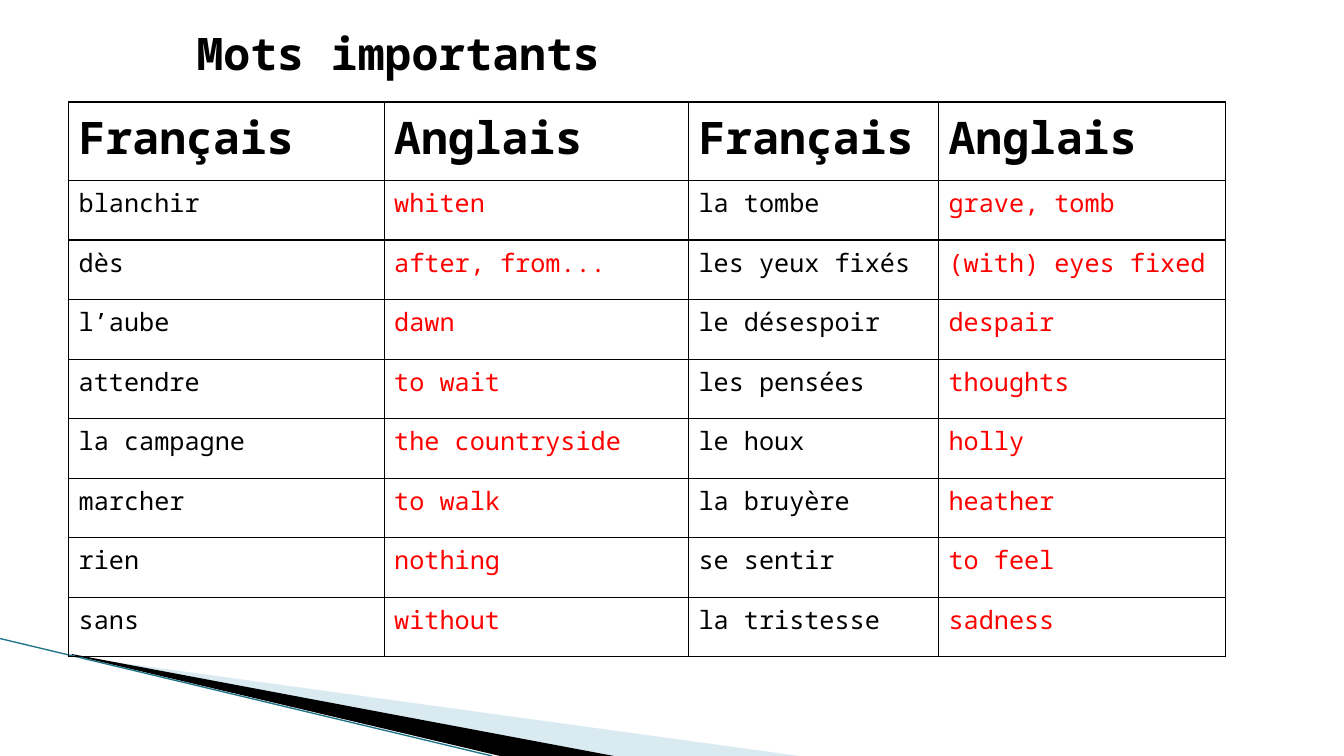
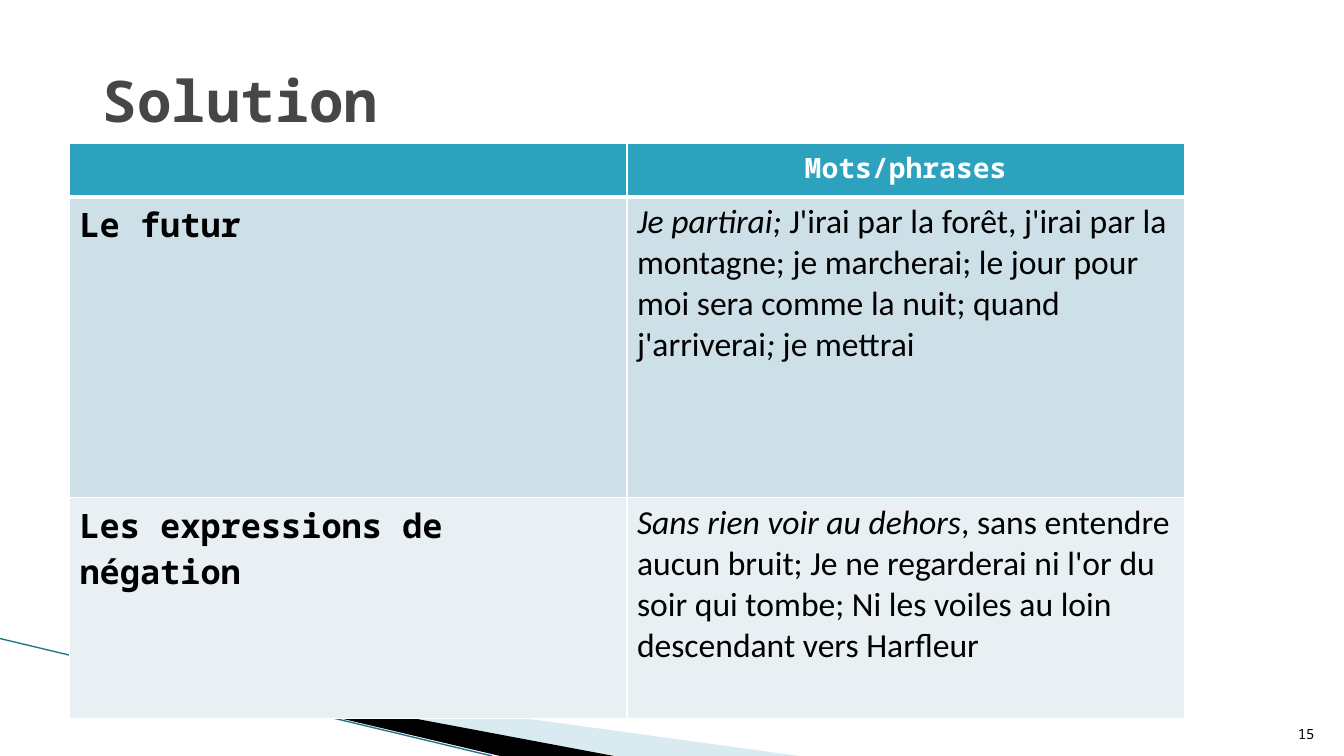
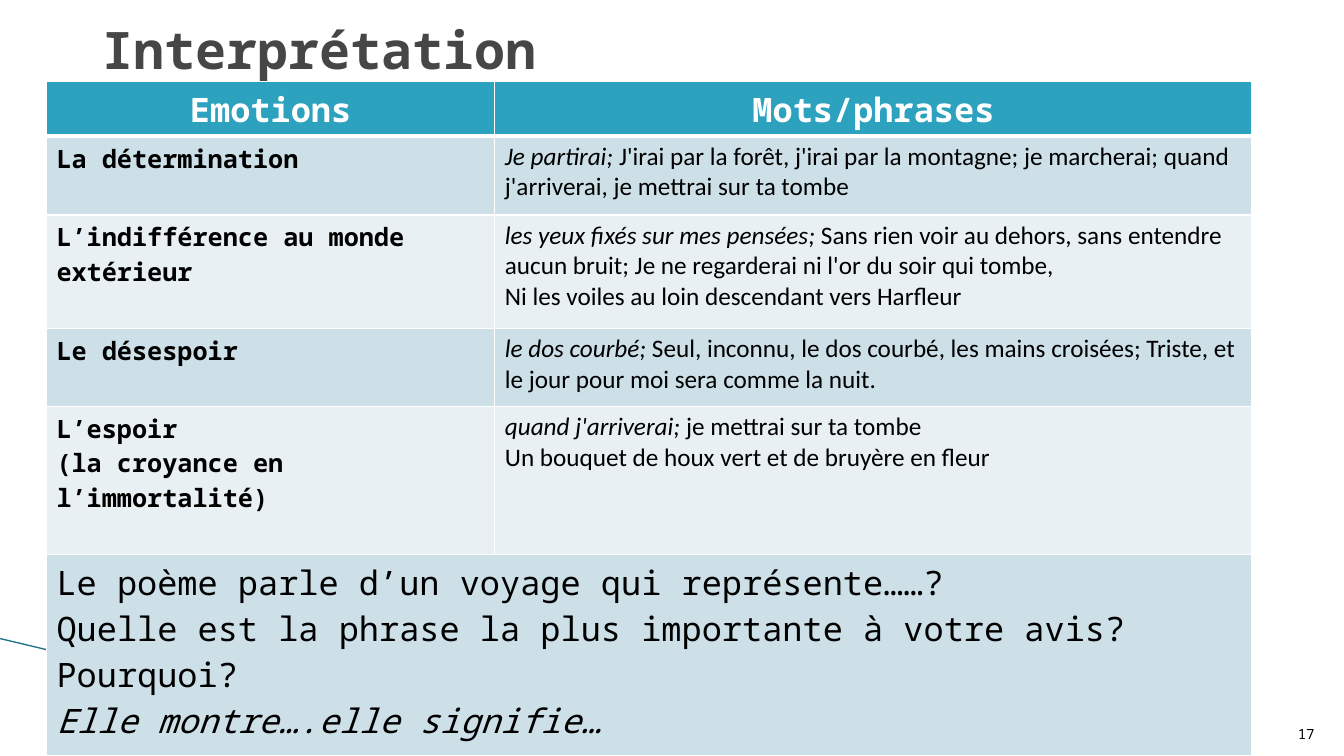
"""Build three French poetry lesson slides: vocabulary, solution and interpretation."""
from dataclasses import dataclass

from lxml import etree
from pptx import Presentation
from pptx import util as u
from pptx.dml.color import RGBColor as Rgb
from pptx.enum import shapes, text
from pptx.oxml import ns


@dataclass(frozen=True)
class Theme:
    mono: str = "Noto Sans Mono"
    sans: str = "Calibri"
    black: str = "000000"
    white: str = "FFFFFF"
    grey: str = "464646"
    red: str = "FF0000"
    teal: str = "2DA2BF"
    line: str = "1F7487"
    wedge: str = "A0CBDC"
    bands: tuple = ("E8F0F4", "CDE0E8")
    large: float = 32
    head: float = 24
    small: float = 20
    body: float = 18
    foot: float = 10


look = Theme()
LEFT, MID, RIGHT = text.PP_ALIGN.LEFT, text.PP_ALIGN.CENTER, text.PP_ALIGN.RIGHT


def write(frame, words, size, color=look.black, face=look.mono, bold=False, align=LEFT):
    """Fill a frame; asterisks enclose italic parts."""
    frame.text = words.replace("*", "")
    for para, line in zip(frame.paragraphs, words.split("\n")):
        para.alignment = align
        para.text = ""
        for n, part in enumerate(line.split("*")):
            if part:
                run = para.add_run()
                run.text = part
                font = run.font
                font.name, font.size = face, u.Pt(size)
                font.bold, font.italic = bold, n % 2 == 1
                font.color.rgb = Rgb.from_string(color)


def grid(slide, left, top, cols, rows, edge, thick):
    """Add a plain table with edges; thick is the rule under its first row."""
    frame = slide.shapes.add_table(
        len(rows), len(cols), u.Cm(left), u.Cm(top), u.Cm(sum(cols)), u.Cm(sum(rows)))
    table = frame.table
    table.first_row = table.horz_banding = False
    for col, width in zip(table.columns, cols):
        col.width = u.Cm(width)
    for r, (row, height) in enumerate(zip(table.rows, rows)):
        row.height = u.Cm(height)
        for cell in row.cells:
            props = cell._tc.get_or_add_tcPr()
            for n, side in enumerate("LRTB"):
                wide = thick if (r, side) in ((0, "B"), (1, "T")) else 1
                rule = etree.Element(ns.qn("a:ln" + side), w=str(u.Pt(wide)))
                fill = etree.SubElement(rule, ns.qn("a:solidFill"))
                etree.SubElement(fill, ns.qn("a:srgbClr"), val=edge)
                props.insert(n, rule)
            cell.fill.background()
    return table


deck = Presentation()
deck.slide_width, deck.slide_height = u.Cm(33.87), u.Cm(19.05)

titles = [
    ("Mots importants", (4.7, 0.53, 24.84, 1.63), 32, look.black, text.MSO_ANCHOR.TOP, ""),
    ("Solution", (2.34, 0.71, 29.21, 3.58), 41, look.grey, text.MSO_ANCHOR.MIDDLE, "15"),
    ("Interprétation", (2.34, 0.71, 29.21, 1.04), 36.9, look.grey, text.MSO_ANCHOR.MIDDLE, "17"),
]
pages = []
for words, box, size, color, anchor, number in titles:
    slide = deck.slides.add_slide(deck.slide_layouts[5])
    pages.append(slide)
    title = slide.shapes.title
    title.left, title.top, title.width, title.height = map(u.Cm, box)
    frame = title.text_frame
    frame.auto_size = text.MSO_AUTO_SIZE.NONE
    frame.word_wrap = True
    frame.vertical_anchor = anchor
    write(frame, words, size, color, bold=True)
    if number:
        foot = slide.shapes.add_textbox(u.Cm(32.03), u.Cm(17.81), u.Cm(1.35), u.Cm(1.02))
        foot.text_frame.word_wrap = True
        foot.text_frame.vertical_anchor = text.MSO_ANCHOR.BOTTOM
        write(foot.text_frame, number, look.foot, align=RIGHT)

wedges = [
    (look.wedge, 40, [(1.85, 16.54), (20.14, 19.05), (15.44, 19.05), (1.85, 16.51)]),
    (look.black, 100, [(1.8, 16.48), (15.47, 19.05), (12.6, 19.05), (1.83, 16.51)]),
]
decor = []
for color, alpha, points in wedges:
    (x, y), *rest = [(u.Cm(a), u.Cm(b)) for a, b in points]
    path = pages[0].shapes.build_freeform(x, y)
    path.add_line_segments(rest, close=True)
    wedge = path.convert_to_shape()
    wedge.shadow.inherit = False
    wedge.line.fill.background()
    wedge.fill.solid()
    wedge.fill.fore_color.rgb = Rgb.from_string(color)
    if alpha < 100:
        tint = wedge.element.spPr.find(".//" + ns.qn("a:srgbClr"))
        etree.SubElement(tint, ns.qn("a:alpha"), val=str(alpha * 1000))
    decor.append(wedge)
slope = pages[0].shapes.add_connector(
    shapes.MSO_CONNECTOR.STRAIGHT, u.Cm(0), u.Cm(16.09), u.Cm(12.4), u.Cm(19.05))
slope.line.color.rgb = Rgb.from_string(look.line)
slope.line.width = u.Pt(0.95)
etree.SubElement(slope.element.spPr, ns.qn("a:effectLst"))
decor.append(slope)
for n, shape in enumerate(decor, 20):
    shape.element.xpath(".//p:cNvPr")[0].set("id", str(n))
    deck.slide_master.shapes.element.append(shape.element)

vocab = [
    ("Français", "Anglais", "Français", "Anglais"),
    ("blanchir", "whiten", "la tombe", "grave, tomb"),
    ("dès", "after, from...", "les yeux fixés", "(with) eyes fixed"),
    ("l’aube", "dawn", "le désespoir", "despair"),
    ("attendre", "to wait", "les pensées", "thoughts"),
    ("la campagne", "the countryside", "le houx", "holly"),
    ("marcher", "to walk", "la bruyère", "heather"),
    ("rien", "nothing", "se sentir", "to feel"),
    ("sans", "without", "la tristesse", "sadness"),
]
table = grid(pages[0], 1.73, 2.57, (7.95, 7.67, 6.3, 7.24), [1.98] + [1.5] * 8, look.black, 1)
for r, row in enumerate(vocab):
    for c, words in enumerate(row):
        size = look.body if r else look.large
        color = look.red if r and c % 2 else look.black
        write(table.cell(r, c).text_frame, words, size, color, bold=r == 0)

future = [
    ("", "Mots/phrases"),
    ("Le futur",
     "*Je partirai; *J'irai par la forêt, j'irai par la montagne; je marcherai; "
     "le jour pour moi sera comme la nuit; quand j'arriverai*;* je mettrai"),
    ("Les expressions de négation",
     "*Sans rien voir au dehors*, sans entendre aucun bruit; Je ne regarderai ni l'or "
     "du soir qui tombe; Ni les voiles au loin descendant vers Harfleur"),
]
moods = [
    ("Emotions", "Mots/phrases"),
    ("La détermination",
     "*Je partirai; *J'irai par la forêt, j'irai par la montagne; je marcherai; "
     "quand j'arriverai, je mettrai sur ta tombe"),
    ("L’indifférence au monde extérieur",
     "*les yeux fixés sur mes pensées;* Sans rien voir au dehors, sans entendre aucun "
     "bruit; Je ne regarderai ni l'or du soir qui tombe,\n"
     "Ni les voiles au loin descendant vers Harfleur"),
    ("Le désespoir",
     "*le dos courbé;* Seul, inconnu, le dos courbé, les mains croisées; Triste, et "
     "le jour pour moi sera comme la nuit."),
    ("L’espoir\n(la croyance en l’immortalité)",
     "*quand j'arriverai;* je mettrai sur ta tombe\n"
     "Un bouquet de houx vert et de bruyère en fleur"),
    ("Le poème parle d’un voyage qui représente……?\n"
     "Quelle est la phrase la plus importante à votre avis? Pourquoi?\n"
     "*Elle montre….elle signifie…*",),
]
answers = [
    (pages[1], future, 1.75, 3.61, (14.05, 14.05), (1.35, 7.58, 5.56),
     look.small, look.head),
    (pages[2], moods, 1.17, 2.06, (11.3, 19.08), (1.37, 1.99, 2.85, 1.98, 3.73, 5.07),
     look.head, look.body),
]
for slide, lines, left, top, cols, rows, head, body in answers:
    table = grid(slide, left, top, cols, rows, look.white, 3)
    for r, row in enumerate(lines):
        whole = len(row) == 1
        if whole:
            table.cell(r, 0).merge(table.cell(r, 1))
        for c, words in enumerate(row):
            cell = table.cell(r, c)
            cell.fill.solid()
            shade = look.bands[r % 2] if r else look.teal
            cell.fill.fore_color.rgb = Rgb.from_string(shade)
            if r == 0:
                write(cell.text_frame, words, head, look.white, bold=True, align=MID)
            elif whole:
                write(cell.text_frame, words, look.head)
            else:
                face = look.sans if c else look.mono
                write(cell.text_frame, words, body, face=face, bold=c == 0)

deck.save("out.pptx")
